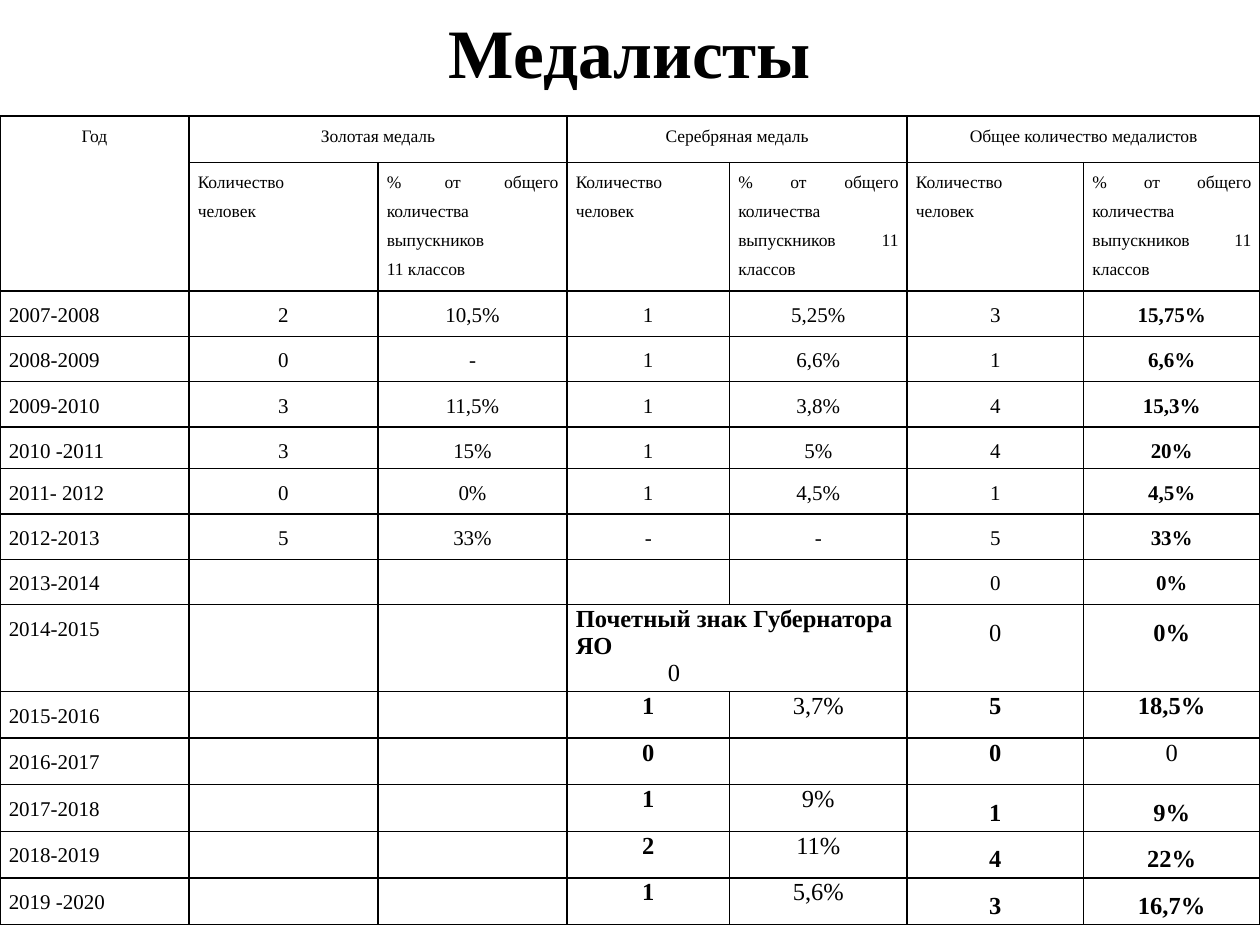
from dataclasses import dataclass

from lxml import etree
from pptx import Presentation
from pptx.dml.color import RGBColor
from pptx.enum.text import MSO_ANCHOR, PP_ALIGN
from pptx.oxml.ns import qn
from pptx.util import Inches, Pt

LEFT, MID, JUST = PP_ALIGN.LEFT, PP_ALIGN.CENTER, PP_ALIGN.JUSTIFY
CENTRE = MSO_ANCHOR.MIDDLE


@dataclass(frozen=True)
class Theme:
    font: str = "Times New Roman"
    ink: str = "000000"
    paper: str = "FFFFFF"
    title: float = 39.6
    head: int = 10
    body: int = 12
    big: int = 14
    rule: int = 1


THEME = Theme()

TITLE = "Медалисты"
GROUPS = ["Золотая медаль", "Серебряная медаль", "Общее количество медалистов"]
COUNT = "Количество\nчеловек"
SHARE = "% от общего количества выпускников 11 классов"
HEADS = [COUNT, "% от общего количества выпускников\n11 классов",
         COUNT, SHARE, COUNT, SHARE]
EARLY = [
    ("2007-2008", "2", "10,5%", "1", "5,25%", "3", "15,75%"),
    ("2008-2009", "0", "-", "1", "6,6%", "1", "6,6%"),
    ("2009-2010", "3", "11,5%", "1", "3,8%", "4", "15,3%"),
    ("2010 -2011", "3", "15%", "1", "5%", "4", "20%"),
    ("2011- 2012", "0", "0%", "1", "4,5%", "1", "4,5%"),
    ("2012-2013", "5", "33%", "-", "-", "5", "33%"),
    ("2013-2014", "", "", "", "", "0", "0%"),
]
BADGE = ("2014-2015", "", "", "", "", "0", "0%")
AWARD, NONE = "Почетный знак Губернатора ЯО", "0"
LATE = [
    ("2015-2016", "", "", "1", "3,7%", "5", "18,5%"),
    ("2016-2017", "", "", "0", "", "0", "0"),
    ("2017-2018", "", "", "1", "9%", "1", "9%"),
    ("2018-2019", "", "", "2", "11%", "4", "22%"),
    ("2019 -2020", "", "", "1", "5,6%", "3", "16,7%"),
]
TIGHT = {"2015-2016", "2016-2017"}
PLAIN = ("2016-2017", 6)

WIDTHS = [1.5, 1.5, 1.5, 1.29, 1.41, 1.4, 1.4]
HEIGHTS = [0.37, 1.02] + [0.36] * 3 + [0.33] + [0.36] * 3 + [0.69] + [0.37] * 5
EDGES = ("a:lnL", "a:lnR", "a:lnT", "a:lnB")


def write(frame, text, size=THEME.body, bold=False, align=MID, space=1.5):
    frame.text = text
    for para in frame.paragraphs:
        para.alignment = align
        para.line_spacing = space
        for font in [para.font] + [run.font for run in para.runs]:
            font.name = THEME.font
            font.size = Pt(size)
            font.bold = bold
            font.color.rgb = RGBColor.from_string(THEME.ink)


def frame_cell(cell):
    cell.margin_left = cell.margin_right = Inches(0.07)
    cell.margin_top, cell.margin_bottom = Inches(0.01), 0
    props = cell._tc.get_or_add_tcPr()
    for edge in EDGES:
        line = etree.SubElement(props, qn(edge), w=str(Pt(THEME.rule)))
        fill = etree.SubElement(line, qn("a:solidFill"))
        etree.SubElement(fill, qn("a:srgbClr"), val=THEME.ink)
    cell.fill.solid()
    cell.fill.fore_color.rgb = RGBColor.from_string(THEME.paper)


def fill_head(grid):
    grid.cell(0, 0).merge(grid.cell(1, 0))
    write(grid.cell(0, 0).text_frame, "Год", size=THEME.head)
    for num, name in enumerate(GROUPS):
        col = 1 + 2 * num
        grid.cell(0, col).merge(grid.cell(0, col + 1))
        write(grid.cell(0, col).text_frame, name, size=THEME.head)
    for col, name in enumerate(HEADS, 1):
        write(grid.cell(1, col).text_frame, name, size=THEME.head, align=JUST)


def fill_years(grid):
    for row, line in enumerate(EARLY + [BADGE] + LATE, 2):
        year, late = line[0], line in LATE
        large = late or line == BADGE
        for col, text in enumerate(line):
            bold = col == 6 or late and col in (3, 5)
            tight = late and (col in (3, 4) or col > 4 and year in TIGHT)
            write(grid.cell(row, col).text_frame, text,
                  size=THEME.big if large and col > 2 else THEME.body,
                  bold=bold and (year, col) != PLAIN,
                  align=MID if col else JUST,
                  space=1 if tight else 1.5)


def fill_badge(grid):
    row = 2 + len(EARLY)
    grid.cell(row, 3).merge(grid.cell(row, 4))
    frame = grid.cell(row, 3).text_frame
    write(frame, f"{AWARD}\n{NONE}", size=THEME.big, bold=True, align=LEFT, space=1)
    last = frame.paragraphs[1]
    last.runs[0].font.bold = False
    last._p.get_or_add_pPr().set("marL", str(Inches(0.73)))


def main():
    deck = Presentation()
    deck.slide_width, deck.slide_height = Inches(10), Inches(7.5)
    slide = deck.slides.add_slide(deck.slide_layouts[5])

    title = slide.shapes.title
    title.left, title.top = Inches(0.5), Inches(0.13)
    title.width, title.height = Inches(9), Inches(0.55)
    title.text_frame.vertical_anchor = CENTRE
    write(title.text_frame, TITLE, size=THEME.title, bold=True, space=1)

    grid = slide.shapes.add_table(
        len(HEIGHTS), len(WIDTHS), 0, Inches(0.92),
        Inches(sum(WIDTHS)), Inches(sum(HEIGHTS))).table
    grid.first_row = grid.horz_banding = False
    for col, width in zip(grid.columns, WIDTHS):
        col.width = Inches(width)
    for row, height in zip(grid.rows, HEIGHTS):
        row.height = Inches(height)
    for cell in grid.iter_cells():
        frame_cell(cell)
    fill_head(grid)
    fill_years(grid)
    fill_badge(grid)
    deck.save("out.pptx")


if __name__ == "__main__":
    main()
